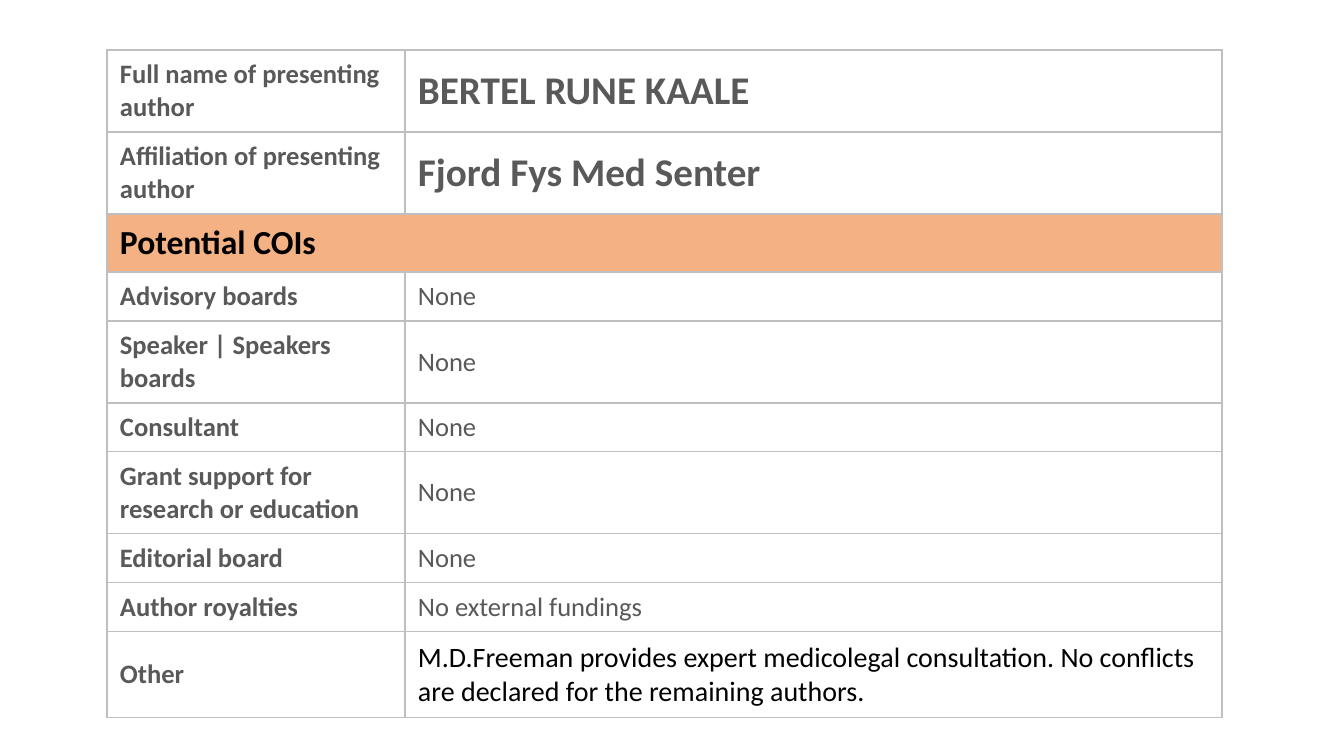
from lxml.etree import SubElement
from pptx import Presentation
from pptx.dml.color import RGBColor
from pptx.enum.text import MSO_ANCHOR
from pptx.oxml.ns import qn
from pptx.util import Pt

PX = 914400 / 100.8
COLORS = {"white": "FFFFFF", "band": "F4B183", "border": "BFBFBF",
          "grey": "595959", "black": "000000"}

SINGLE, DOUBLE, BAND, LAST = 49, 82, 58, 86

LABEL = dict(size=19, color="grey", bold=True)
ANSWER = dict(LABEL, bold=False)
PRESENTER = dict(LABEL, size=28)
HEADING = dict(LABEL, size=24, color="black")
REMARK = dict(size=20, color="black", bold=False)

# Row height, label, answer and answer style; a row without an answer is a band.
ROWS = [
    (DOUBLE, "Full name of presenting author", "BERTEL RUNE KAALE", PRESENTER),
    (DOUBLE, "Affiliation of presenting author", "Fjord Fys Med Senter", PRESENTER),
    (BAND, "Potential COIs", None, HEADING),
    (SINGLE, "Advisory boards", "None", ANSWER),
    (DOUBLE, "Speaker | Speakers boards", "None", ANSWER),
    (SINGLE, "Consultant", "None", ANSWER),
    (DOUBLE, "Grant support for research or education", "None", ANSWER),
    (SINGLE, "Editorial board", "None", ANSWER),
    (SINGLE, "Author royalties", "No external fundings", ANSWER),
    (LAST, "Other",
     "M.D.Freeman provides expert medicolegal consultation. "
     "No conflicts are declared for the remaining authors.", REMARK),
]


def emu(px):
    return round(px * PX)


def rgb(name):
    return RGBColor.from_string(COLORS[name])


class SlideBuilder:
    font = "Calibri"

    def __init__(self, prs):
        self.slide = prs.slides.add_slide(prs.slide_layouts[6])

    def table(self, left, top, widths, heights):
        frame = self.slide.shapes.add_table(
            len(heights), len(widths), emu(left), emu(top),
            emu(sum(widths)), emu(sum(heights)))
        table = frame.table
        table.first_row = table.horz_banding = False
        for column, width in zip(table.columns, widths):
            column.width = emu(width)
        for row, height in zip(table.rows, heights):
            row.height = emu(height)
        for cell in table.iter_cells():
            self.borders(cell)
            cell.fill.solid()
            cell.fill.fore_color.rgb = rgb("white")
        return table

    def borders(self, cell):
        """Draw a thin line on all four sides; call before setting the fill."""
        tc_pr = cell._tc.get_or_add_tcPr()
        for side in ("a:lnL", "a:lnR", "a:lnT", "a:lnB"):
            line = SubElement(tc_pr, qn(side), w=str(Pt(1)))
            fill = SubElement(line, qn("a:solidFill"))
            SubElement(fill, qn("a:srgbClr"), val=COLORS["border"])

    def cell_text(self, cell, text, size, color, bold):
        cell.vertical_anchor = MSO_ANCHOR.MIDDLE
        cell.margin_left = cell.margin_right = emu(13)
        cell.margin_top = cell.margin_bottom = emu(7)
        r = cell.text_frame.paragraphs[0].add_run()
        r.text = text
        r.font.name = self.font
        r.font.size = Pt(size)
        r.font.bold = bold
        r.font.color.rgb = rgb(color)


def main():
    prs = Presentation()
    prs.slide_width, prs.slide_height = emu(1344), emu(756)
    s = SlideBuilder(prs)
    table = s.table(107, 50, (298, 817), [row[0] for row in ROWS])
    for i, (_, label, answer, style) in enumerate(ROWS):
        first, second = table.cell(i, 0), table.cell(i, 1)
        if answer is None:
            first.merge(second)
            first.fill.fore_color.rgb = rgb("band")
            s.cell_text(first, label, **style)
        else:
            s.cell_text(first, label, **LABEL)
            s.cell_text(second, answer, **style)
    prs.save("out.pptx")


if __name__ == "__main__":
    main()
